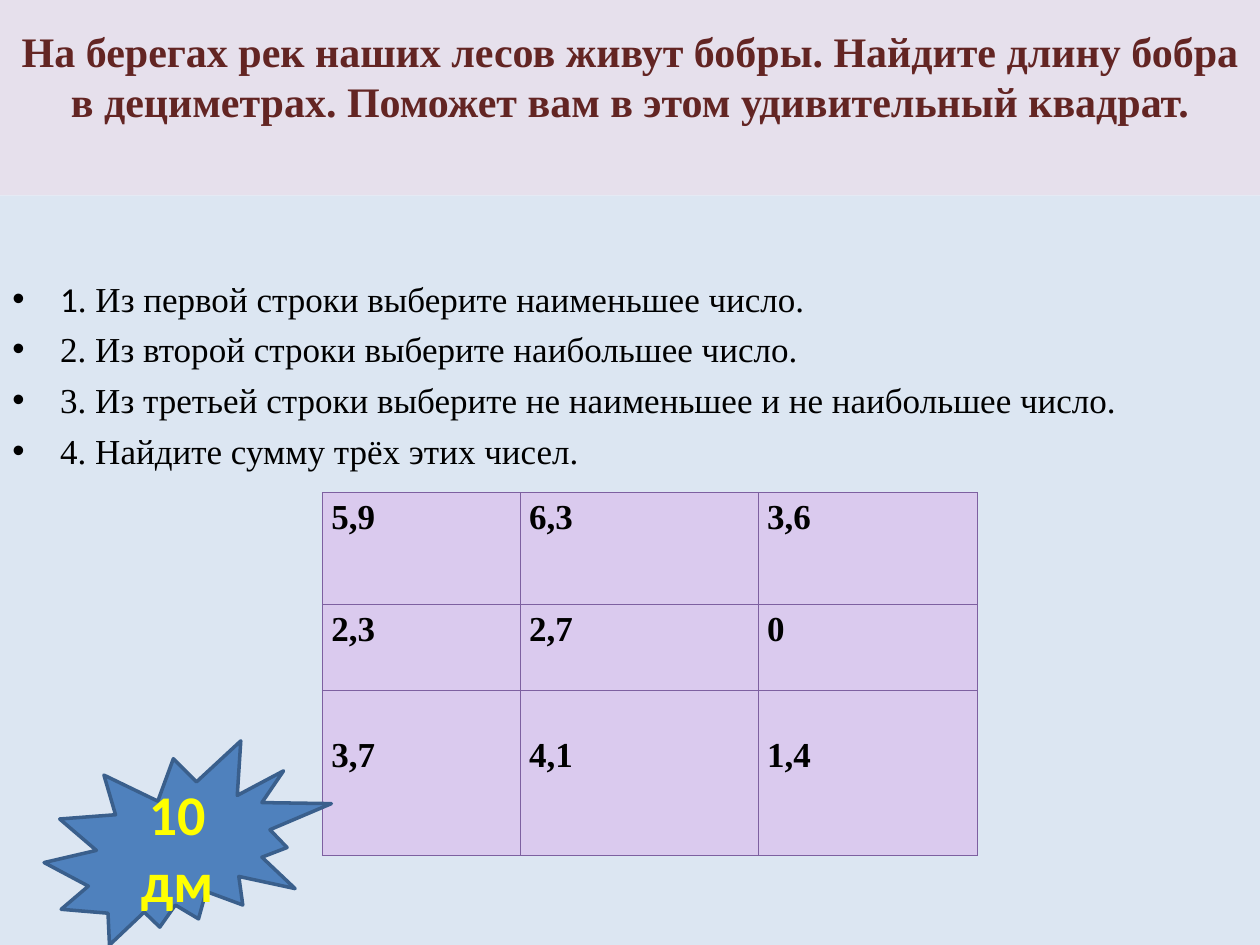
from lxml import etree
from pptx import Presentation
from pptx.dml.color import RGBColor
from pptx.enum.shapes import MSO_SHAPE
from pptx.enum.text import MSO_ANCHOR, PP_ALIGN
from pptx.oxml.ns import qn
from pptx.util import Inches, Pt

RECT, SEAL = MSO_SHAPE.RECTANGLE, MSO_SHAPE.EXPLOSION2
TOP, MIDDLE = MSO_ANCHOR.TOP, MSO_ANCHOR.MIDDLE
LEFT, CENTER = PP_ALIGN.LEFT, PP_ALIGN.CENTER

MAUVE = RGBColor(0xE6, 0xE0, 0xEC)
SKY = RGBColor(0xDC, 0xE6, 0xF2)
LILAC = RGBColor(0xDA, 0xCA, 0xEE)
PURPLE = RGBColor(0x7D, 0x60, 0xA0)
BLUE = RGBColor(0x4F, 0x81, 0xBD)
NAVY = RGBColor(0x3A, 0x5F, 0x8C)
MAROON = RGBColor(0x63, 0x25, 0x23)
YELLOW = RGBColor(0xFF, 0xFF, 0x00)
BLACK = RGBColor(0, 0, 0)
SERIF, SANS = "Times New Roman", "Calibri"

# Content
TITLE = ("На берегах рек наших лесов живут бобры. Найдите длину бобра "
         "в дециметрах. Поможет вам в этом удивительный квадрат.")
STEPS = [
    [("1", SANS), (". Из первой строки выберите наименьшее число.", SERIF)],
    [("2. Из второй строки выберите наибольшее число.", SERIF)],
    [("3. Из третьей строки выберите не наименьшее и не наибольшее число.", SERIF)],
    [("4. Найдите сумму трёх этих чисел.", SERIF)],
]
SQUARE = [["5,9", "6,3", "3,6"], ["2,3", "2,7", "0"], ["3,7", "4,1", "1,4"]]
COLS = [1.57, 1.89, 1.74]
ROWS = [0.89, 0.68, 1.31]
DROPS = [0, 0, 0.32]  # top margin of the cells in each row
ANSWER = "10 дм"


def write(para, text, font=SERIF, size=20, color=BLACK, bold=False, align=LEFT):
    para.alignment = align
    run = para.add_run()
    run.text = text
    run.font.name, run.font.size, run.font.bold = font, Pt(size), bold
    run.font.color.rgb = color


def block(slide, kind, box, fill, line=None, anchor=TOP, top=0.05):
    shape = slide.shapes.add_shape(kind, *map(Inches, box))
    shape.shadow.inherit = False
    shape.fill.solid()
    shape.fill.fore_color.rgb = fill
    if line:
        shape.line.color.rgb, shape.line.width = line, Pt(2)
    else:
        shape.line.fill.background()
    frame = shape.text_frame
    frame.word_wrap, frame.vertical_anchor = True, anchor
    frame.margin_top = Inches(top)
    return frame


def bullet(para):
    props = para._p.get_or_add_pPr()
    props.set("marL", str(Inches(0.38)))
    props.set("indent", str(-Inches(0.38)))
    etree.SubElement(props, qn("a:buFont")).set("typeface", "Arial")
    etree.SubElement(props, qn("a:buChar")).set("char", "•")


def border(cell):
    props = cell._tc.get_or_add_tcPr()
    for spot, side in enumerate(("lnL", "lnR", "lnT", "lnB")):
        line = etree.Element(qn("a:" + side), w=str(Pt(0.75)))
        fill = etree.SubElement(line, qn("a:solidFill"))
        etree.SubElement(fill, qn("a:srgbClr")).set("val", str(PURPLE))
        props.insert(spot, line)


def build():
    deck = Presentation()
    deck.slide_width, deck.slide_height = Inches(10), Inches(7.5)
    slide = deck.slides.add_slide(deck.slide_layouts[6])

    # Title band
    frame = block(slide, RECT, (0, 0, 10, 1.55), MAUVE, top=0.2)
    write(frame.paragraphs[0], TITLE, size=24, color=MAROON, bold=True, align=CENTER)

    # Steps
    frame = block(slide, RECT, (0, 1.55, 10, 5.95), SKY, top=0.65)
    for i, step in enumerate(STEPS):
        para = frame.add_paragraph() if i else frame.paragraphs[0]
        if i:
            para.space_before = Pt(5)
        bullet(para)
        for text, font in step:
            write(para, text, font=font)

    # Number square
    box = map(Inches, (2.56, 3.91, sum(COLS), sum(ROWS)))
    table = slide.shapes.add_table(len(ROWS), len(COLS), *box).table
    table.first_row = table.horz_banding = False
    for col, width in zip(table.columns, COLS):
        col.width = Inches(width)
    for row, high, drop, values in zip(table.rows, ROWS, DROPS, SQUARE):
        row.height = Inches(high)
        for cell, value in zip(row.cells, values):
            cell.fill.solid()
            cell.fill.fore_color.rgb = LILAC
            cell.margin_left = cell.margin_right = Inches(0.07)
            cell.margin_top, cell.margin_bottom = Inches(drop), 0
            border(cell)
            para = cell.text_frame.paragraphs[0]
            para.line_spacing = 1.15
            write(para, value, bold=True)

    # Answer burst
    frame = block(slide, SEAL, (0.35, 5.88, 2.28, 1.62), BLUE, line=NAVY, anchor=MIDDLE)
    write(frame.paragraphs[0], ANSWER, font=SANS, size=32, color=YELLOW,
          bold=True, align=CENTER)

    deck.save("out.pptx")


if __name__ == "__main__":
    build()
